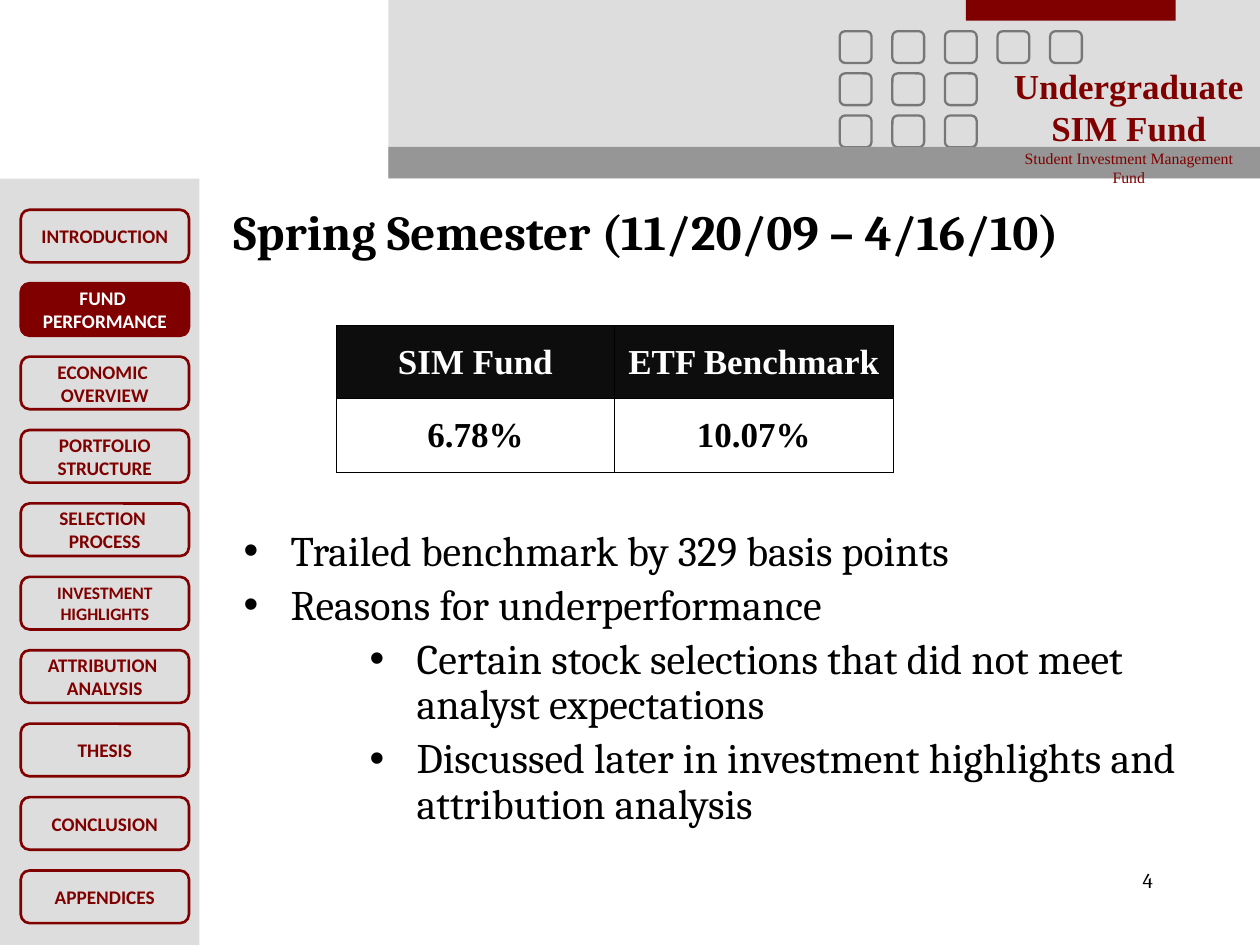
import pptx
import pptx.dml.color
import pptx.enum.shapes
import pptx.enum.text
import pptx.oxml.ns
import pptx.util
import lxml.etree

Cm, Pt = pptx.util.Cm, pptx.util.Pt
SHAPE = pptx.enum.shapes.MSO_SHAPE
ALIGN = pptx.enum.text.PP_ALIGN
ANCHOR = pptx.enum.text.MSO_ANCHOR

# Content
TITLE = "Spring Semester (11/20/09 – 4/16/10)"
PAGE_NUMBER = "4"
ACTIVE = 1
SECTIONS = [
    ["INTRODUCTION"],
    ["FUND ", "PERFORMANCE"],
    ["ECONOMIC ", "OVERVIEW"],
    ["PORTFOLIO", "STRUCTURE"],
    ["SELECTION ", "PROCESS"],
    ["INVESTMENT", "HIGHLIGHTS"],
    ["ATTRIBUTION ", "ANALYSIS"],
    ["THESIS"],
    ["CONCLUSION"],
    ["APPENDICES"],
]
SMALL_SECTION = "INVESTMENT"
FUND_NAME = [("Undergraduate", 20, True), ("SIM Fund", 20, True),
             ("Student Investment Management Fund", 9, False)]
RETURNS = [["SIM Fund", "ETF Benchmark"], ["6.78%", "10.07%"]]
BULLETS = [  # level, text
    (0, "Trailed benchmark by 329 basis points"),
    (0, "Reasons for underperformance"),
    (2, "Certain stock selections that did not meet analyst expectations"),
    (2, "Discussed later in investment highlights and attribution analysis"),
]
SQUARES_PER_ROW = [5, 3, 3]

COLORS = {"maroon": "800000", "panel": "DDDDDD", "band": "969696",
          "square": "777777", "header": "0D0D0D", "black": "000000",
          "white": "FFFFFF"}


def rgb(name):
    return pptx.dml.color.RGBColor.from_string(COLORS[name])


def place(left, top, width, height):
    return [Cm(value) for value in (left, top, width, height)]


def add_block(kind, at, fill=None, line=None, weight=1.5):
    shape = page.shapes.add_shape(kind, *place(*at))
    shape.shadow.inherit = False
    if fill:
        shape.fill.solid()
        shape.fill.fore_color.rgb = rgb(fill)
    else:
        shape.fill.background()
    if line:
        shape.line.color.rgb = rgb(line)
        shape.line.width = Pt(weight)
    else:
        shape.line.fill.background()
    return shape


def add_text_box(at):
    frame = page.shapes.add_textbox(*place(*at)).text_frame
    frame.word_wrap = True
    return frame


def next_para(frame, index):
    return frame.add_paragraph() if index else frame.paragraphs[0]


def write(para, text, color, align=ALIGN.LEFT, **font):
    span = para.add_run()
    span.text = text
    para.alignment = align
    for name, value in font.items():
        setattr(span.font, name, value)
    span.font.color.rgb = rgb(color)


def add_child(parent, tag, **attributes):
    child = lxml.etree.SubElement(parent, pptx.oxml.ns.qn(tag))
    for name, value in attributes.items():
        child.set(name, value)
    return child


def add_borders(cell):
    properties = cell._tc.get_or_add_tcPr()
    for index, tag in enumerate(("a:lnL", "a:lnR", "a:lnT", "a:lnB")):
        edge = lxml.etree.Element(pptx.oxml.ns.qn(tag), w=str(Pt(0.5)))
        add_child(add_child(edge, "a:solidFill"), "a:srgbClr", val=COLORS["black"])
        properties.insert(index, edge)


deck = pptx.Presentation()
deck.slide_width, deck.slide_height = Cm(25.4), Cm(19.05)
page = deck.slides.add_slide(deck.slide_layouts[5])

# Header panel with its grid of squares
add_block(SHAPE.RECTANGLE, (7.83, 0, 17.57, 3.6), "panel")
for row, count in enumerate(SQUARES_PER_ROW):
    for column in range(count):
        add_block(SHAPE.FLOWCHART_ALTERNATE_PROCESS,
                  (16.93 + 1.06 * column, 0.63 + 0.85 * row, 0.64, 0.64),
                  line="square", weight=1.3)
add_block(SHAPE.RECTANGLE, (19.47, 0, 4.23, 0.42), "maroon")
add_block(SHAPE.RECTANGLE, (7.83, 2.96, 17.57, 0.64), "band")

# Fund name
frame = add_text_box((20.32, 1.3, 4.87, 2.08))
for side in ("left", "top", "right", "bottom"):
    setattr(frame, "margin_" + side, 0)
for index, (text, size, bold) in enumerate(FUND_NAME):
    write(next_para(frame, index), text, "maroon", ALIGN.CENTER,
          name="Times New Roman", size=Pt(size), bold=bold)

# Section navigation
add_block(SHAPE.RECTANGLE, (0, 3.6, 4.02, 15.45), "panel")
for index, lines in enumerate(SECTIONS):
    active = index == ACTIVE
    button = add_block(SHAPE.FLOWCHART_ALTERNATE_PROCESS,
                       (0.42, 4.23 + 1.48 * index, 3.39, 1.06),
                       "maroon" if active else None, "maroon")
    frame = button.text_frame
    frame.word_wrap = False
    frame.vertical_anchor = ANCHOR.MIDDLE
    for number, text in enumerate(lines):
        write(next_para(frame, number), text, "white" if active else "maroon",
              ALIGN.CENTER, name="Calibri", bold=True,
              size=Pt(10 if lines[0] == SMALL_SECTION else 11))

# Title
title = page.shapes.title
title.left, title.top, title.width, title.height = place(4.45, 3.6, 19.68, 2.12)
frame = title.text_frame
frame.word_wrap = True
frame.auto_size = pptx.enum.text.MSO_AUTO_SIZE.NONE
frame.vertical_anchor = ANCHOR.MIDDLE
write(frame.paragraphs[0], TITLE, "black", name="Cambria", size=Pt(28), bold=True)

# Returns table
table = page.shapes.add_table(2, 2, *place(6.78, 6.56, 11.22, 2.96)).table
table.horz_banding = False
for row, values in enumerate(RETURNS):
    for column, text in enumerate(values):
        cell = table.cell(row, column)
        cell.vertical_anchor = ANCHOR.MIDDLE
        for side in ("left", "top", "right", "bottom"):
            setattr(cell, "margin_" + side, Cm(0.02))
        cell.fill.solid()
        cell.fill.fore_color.rgb = rgb("white" if row else "header")
        add_borders(cell)
        write(cell.text_frame.paragraphs[0], text, "black" if row else "white",
              ALIGN.CENTER, name="Times New Roman", size=Pt(20), bold=True)

# Commentary bullets
frame = add_text_box((4.66, 10.56, 19.89, 6.59))
for index, (level, text) in enumerate(BULLETS):
    para = next_para(frame, index)
    para.level = level
    properties = para._p.get_or_add_pPr()
    properties.set("marL", str(Cm(0.95 + 1.27 * level)))
    properties.set("indent", str(-Cm(0.95)))
    add_child(properties, "a:buFont", typeface="Arial")
    add_child(properties, "a:buChar", char="•")
    para.line_spacing = 0.9
    para.space_before = Pt(5 if index else 0)
    write(para, text, "black", name="Cambria", size=Pt(24))

# Page number
frame = add_text_box((18.2, 17.36, 5.29, 1.27))
write(frame.paragraphs[0], PAGE_NUMBER, "black", ALIGN.RIGHT,
      name="Cambria", size=Pt(12))

deck.save("out.pptx")
